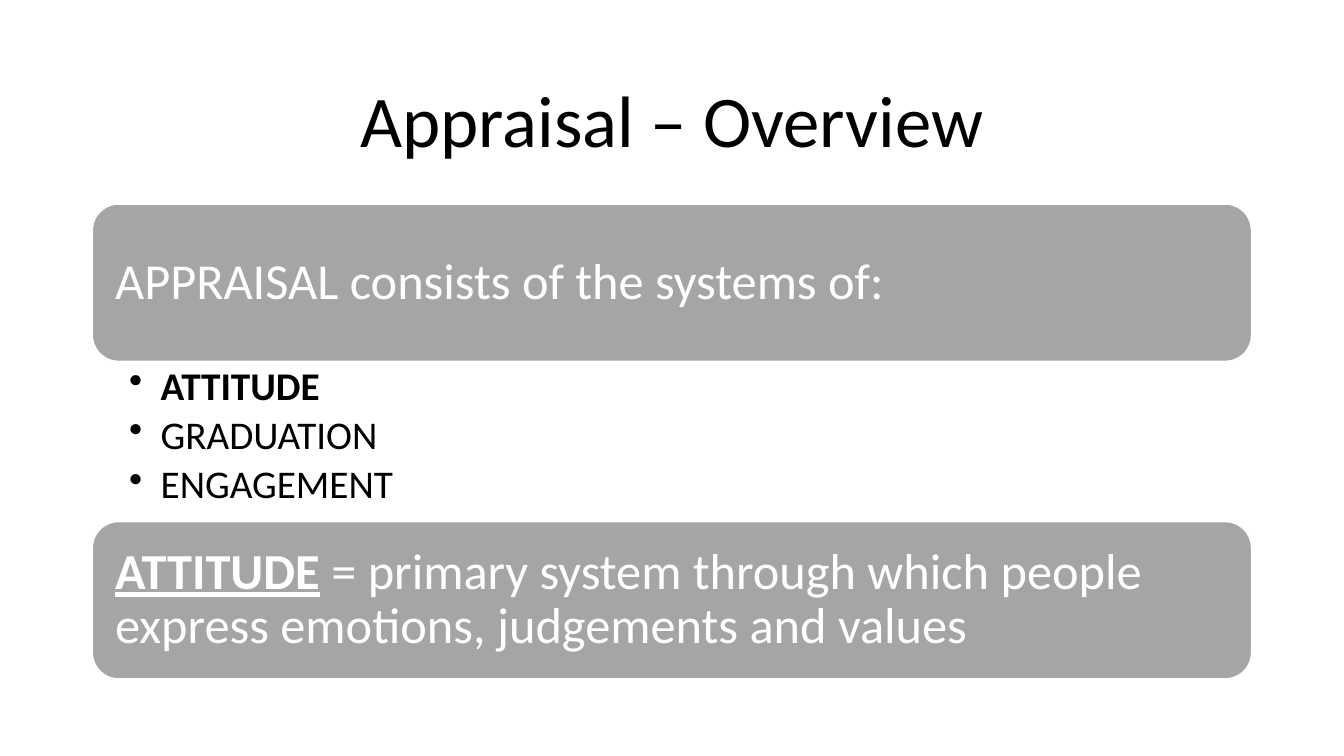
from lxml.etree import SubElement
from pptx import Presentation
from pptx.dml.color import RGBColor
from pptx.enum.shapes import MSO_SHAPE
from pptx.enum.text import MSO_ANCHOR, PP_ALIGN
from pptx.oxml.ns import qn
from pptx.util import Pt

LEFT, WIDTH = 66, 828
BOX_HEIGHT = 112.3


def style(paragraph, size, color, alignment=PP_ALIGN.LEFT):
    paragraph.alignment = alignment
    paragraph.line_spacing = 0.9
    paragraph.font.name = "Calibri"
    paragraph.font.size = Pt(size)
    paragraph.font.color.rgb = RGBColor.from_string(color)


def set_margins(frame, left, top, right, bottom):
    frame.word_wrap = True
    frame.margin_left, frame.margin_top = Pt(left), Pt(top)
    frame.margin_right, frame.margin_bottom = Pt(right), Pt(bottom)


presentation = Presentation()
presentation.slide_width, presentation.slide_height = Pt(960), Pt(540)
slide = presentation.slides.add_slide(presentation.slide_layouts[5])

title = slide.shapes.title
title.left, title.top, title.width, title.height = Pt(LEFT), Pt(44), Pt(WIDTH), Pt(89)
title.text_frame.text = "Appraisal – Overview"
title.text_frame.vertical_anchor = MSO_ANCHOR.MIDDLE
style(title.text_frame.paragraphs[0], 52, "000000", PP_ALIGN.CENTER)

# Top of each box, its emphasised opening and the rest of its text
boxes = [
    (145.8, "", "APPRAISAL consists of the systems of:"),
    (372.6, "ATTITUDE",
     " = primary system through which people express emotions, judgements and values"),
]
for top, emphasis, text in boxes:
    box = slide.shapes.add_shape(
        MSO_SHAPE.ROUNDED_RECTANGLE, Pt(LEFT), Pt(top), Pt(WIDTH), Pt(BOX_HEIGHT))
    box.shadow.inherit = False
    box.fill.solid()
    box.fill.fore_color.rgb = RGBColor.from_string("A5A5A5")
    box.line.color.rgb = RGBColor.from_string("FFFFFF")
    box.line.width = Pt(1)
    set_margins(box.text_frame, 10.8, 10.8, 10.8, 10.8)
    box.text_frame.vertical_anchor = MSO_ANCHOR.MIDDLE
    paragraph = box.text_frame.paragraphs[0]
    style(paragraph, 36, "FFFFFF")
    if emphasis:
        run = paragraph.add_run()
        run.text = emphasis
        run.font.bold = run.font.underline = True
    paragraph.add_run().text = text

systems = slide.shapes.add_textbox(Pt(LEFT), Pt(258.2), Pt(WIDTH), Pt(114.4))
set_margins(systems.text_frame, 26.3, 3.6, 20, 3.6)
systems.text_frame.text = "ATTITUDE\nGRADUATION\nENGAGEMENT"
for paragraph in systems.text_frame.paragraphs:
    style(paragraph, 28, "000000")
    paragraph.font.bold = paragraph.text == "ATTITUDE"
    paragraph.space_after = Pt(5)
    properties = paragraph._p.get_or_add_pPr()
    properties.set("marL", str(Pt(22.5)))
    properties.set("indent", str(Pt(-22.5)))
    bullet = SubElement(properties, qn("a:buChar"), char="•")
    properties.find(qn("a:defRPr")).addprevious(bullet)

presentation.save("out.pptx")
